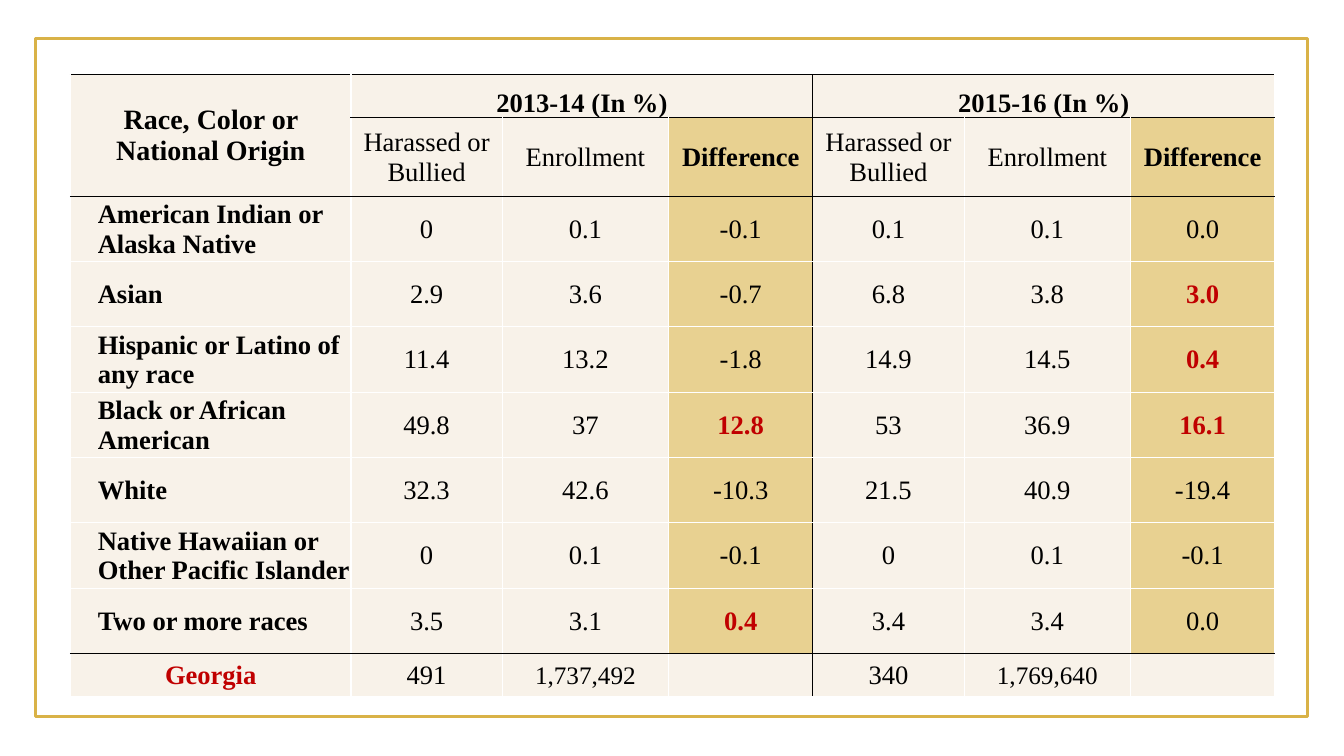
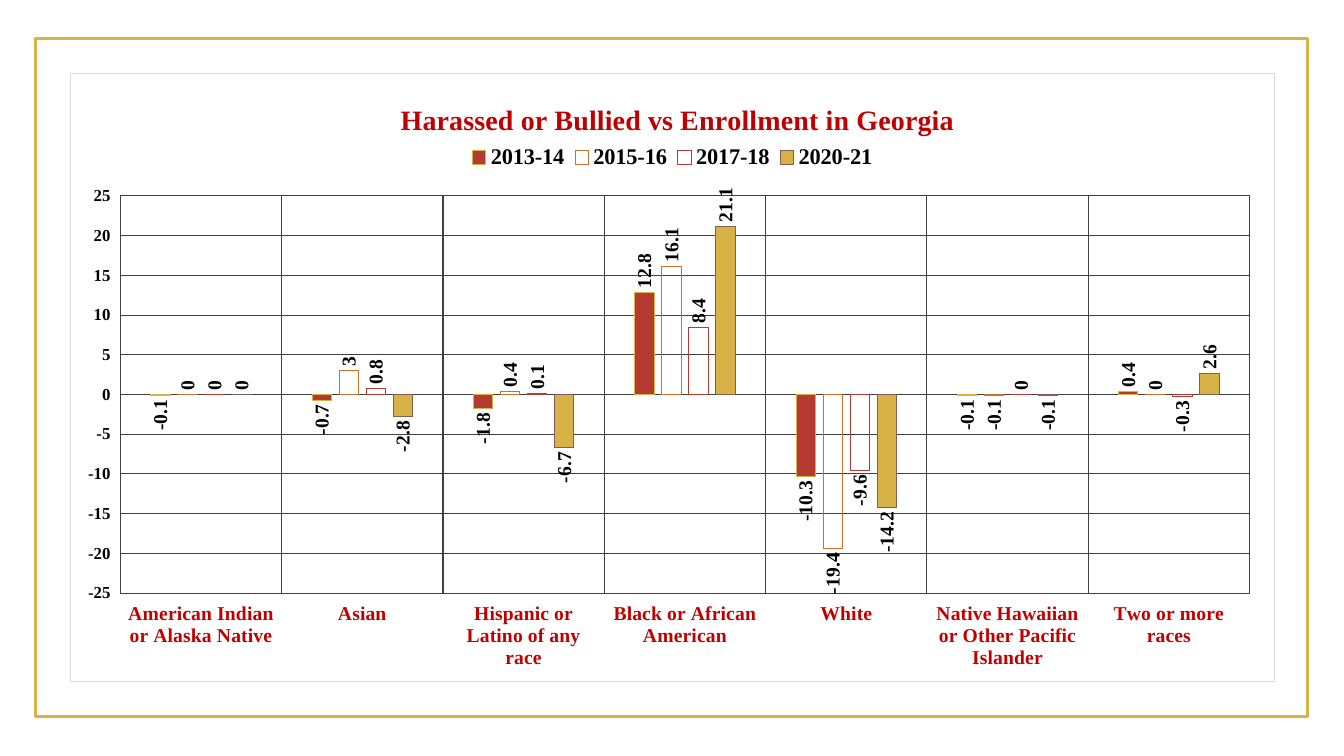
from lxml.etree import SubElement as Sub
from pptx import Presentation
from pptx.chart.data import CategoryChartData as Data
from pptx.dml.color import RGBColor as RGB
from pptx.enum.chart import XL_CHART_TYPE as Kind, XL_LABEL_POSITION as Spot
from pptx.enum.chart import XL_LEGEND_POSITION as Side, XL_TICK_LABEL_POSITION as Tags
from pptx.enum.chart import XL_TICK_MARK as Tick
from pptx.enum.shapes import MSO_SHAPE as Form
from pptx.enum.text import MSO_ANCHOR as Anchor, PP_ALIGN as Align
from pptx.oxml.ns import qn
from pptx.util import Inches, Pt

WHITE = RGB(0xFF, 0xFF, 0xFF)
BLACK = RGB(0, 0, 0)
RED = RGB(0xC0, 0, 0)
GOLD = RGB(0xD9, 0xB2, 0x47)
SAND = RGB(0xE8, 0xD1, 0x91)
CREAM = RGB(0xF8, 0xF2, 0xE9)
BRICK = RGB(0xB5, 0x3A, 0x31)
RUST = RGB(0xCC, 0x70, 0x2D)
BROWN = RGB(0x81, 0x5F, 0x56)
GREY = RGB(0x40, 0x40, 0x40)
PALE = RGB(0xD9, 0xD9, 0xD9)
FACE = "Times New Roman"

RACES = ["American Indian or Alaska Native", "Asian", "Hispanic or Latino of any race",
         "Black or African American", "White",
         "Native Hawaiian or Other Pacific Islander", "Two or more races"]
RATES = ["0 0.1 -0.1 0.1 0.1 0.0", "2.9 3.6 -0.7 6.8 3.8 3.0",
         "11.4 13.2 -1.8 14.9 14.5 0.4", "49.8 37 12.8 53 36.9 16.1",
         "32.3 42.6 -10.3 21.5 40.9 -19.4", "0 0.1 -0.1 0 0.1 -0.1",
         "3.5 3.1 0.4 3.4 3.4 0.0"]
HEADS = ["Harassed or Bullied", "Enrollment", "Difference"]
ROWS = [["Race, Color or National Origin", "2013-14 (In %)", "", "", "2015-16 (In %)", "", ""],
        [""] + HEADS * 2,
        *[[race] + rate.split() for race, rate in zip(RACES, RATES)],
        ["Georgia", "491", "1,737,492", "", "340", "1,769,640", ""]]
WIDE = [2.78] + [1.5, 1.65, 1.43] * 2
TALL = [0.43, 0.78] + [0.65] * 7 + [0.43]
SPANS = [(0, 0, 1, 0), (0, 1, 0, 3), (0, 4, 0, 6)]
LAST = len(ROWS) - 1
GAPS = (3, 6)

YEARS = [("2013-14", [-0.1, -0.7, -1.8, 12.8, -10.3, -0.1, 0.4], BRICK, GOLD),
         ("2015-16", [0, 3, 0.4, 16.1, -19.4, -0.1, 0], None, RUST),
         ("2017-18", [0, 0.8, 0.1, 8.4, -9.6, 0, -0.3], None, BRICK),
         ("2020-21", [0, -2.8, -6.7, 21.1, -14.2, -0.1, 2.6], GOLD, BROWN)]


class Deck:
    """Holds the shared style and the current slide; places are percents of the slide."""

    def __init__(self):
        self.file = Presentation()
        self.file.slide_width, self.file.slide_height = Inches(13.33), Inches(7.5)

    def box(self, x, y, w, h):
        wide, high = self.file.slide_width, self.file.slide_height
        return [int(part * full / 100) for part, full in zip((x, y, w, h), (wide, high) * 2)]

    def slide(self):
        self.now = self.file.slides.add_slide(self.file.slide_layouts[6])
        frame = self.now.shapes.add_shape(Form.RECTANGLE, *self.box(2.63, 5.05, 94.67, 89.73))
        frame.shadow.inherit = False
        frame.fill.background()
        self.line(frame.line, GOLD, 2)

    def line(self, line, tint, width=0.75):
        line.color.rgb = tint
        line.width = Pt(width)

    def font(self, font, size, tint=BLACK, bold=True):
        font.name, font.size, font.bold = FACE, Pt(size), bold
        font.color.rgb = tint

    def text(self, para, words, size, tint=BLACK, bold=True):
        run = para.add_run()
        run.text = words
        self.font(run.font, size, tint, bold)

    def edge(self, cell, tag, tint):
        props = cell._tc.get_or_add_tcPr()
        line = Sub(props, qn("a:" + tag), w=str(Pt(1)))
        Sub(Sub(line, qn("a:solidFill")), qn("a:srgbClr"), val=str(tint))

    def cell(self, cell, row, col, words):
        end = col + max(cell.span_width, 1) - 1
        dark = {"lnL": col == 4, "lnR": end == 3,
                "lnT": row in (0, 1, 2, LAST), "lnB": row in (0, 1, LAST - 1)}
        for tag, black in dark.items():
            self.edge(cell, tag, BLACK if black else WHITE)
        cell.fill.solid()
        cell.fill.fore_color.rgb = SAND if col in GAPS and 0 < row < LAST else CREAM
        cell.margin_left = cell.margin_right = cell.margin_top = Inches(0.01)
        cell.margin_bottom = 0
        cell.vertical_anchor = Anchor.BOTTOM if row == 0 and col else Anchor.MIDDLE
        if not words:
            return
        para = cell.text_frame.paragraphs[0]
        name = col == 0 and 1 < row < LAST
        para.alignment = Align.LEFT if name else Align.CENTER
        if name:
            para._p.get_or_add_pPr().set("marL", str(Inches(0.26)))
        more = col in GAPS and 1 < row < LAST and float(words) > 0
        red = more or (row == LAST and col == 0)
        bold = red or col == 0 or row == 0 or (row == 1 and col in GAPS)
        size = 20 if row == col == 0 else 18 if row == LAST and col in (2, 5) else 19
        self.text(para, words, size, RED if red else BLACK, bold)

    def table(self, *place):
        x, y, w, h = self.box(*place)
        grid = self.now.shapes.add_table(len(ROWS), len(WIDE), x, y, w, h).table
        grid.first_row = grid.horz_banding = False
        for col, share in zip(grid.columns, WIDE):
            col.width = int(w * share / sum(WIDE))
        for row, share in zip(grid.rows, TALL):
            row.height = int(h * share / sum(TALL))
        for top, left, low, right in SPANS:
            grid.cell(top, left).merge(grid.cell(low, right))
        for row, texts in enumerate(ROWS):
            for col, words in enumerate(texts):
                cell = grid.cell(row, col)
                if not cell.is_spanned:
                    self.cell(cell, row, col, words)

    def pin(self, part, index, inner=False, **place):
        for old in part.findall(qn("c:layout")):
            part.remove(old)
        plan = part.makeelement(qn("c:layout"))
        part.insert(index, plan)
        spot = Sub(plan, qn("c:manualLayout"))
        if inner:
            Sub(spot, qn("c:layoutTarget"), val="inner")
        for key in "xy":
            Sub(spot, qn(f"c:{key}Mode"), val="edge")
        for key, value in place.items():
            Sub(spot, qn("c:" + key), val=str(value / 100))

    def panel(self, chart):
        space = chart._chartSpace
        props = space.makeelement(qn("c:spPr"))
        space.find(qn("c:chart")).addnext(props)
        line = props.makeelement(qn("a:ln"), w=str(Pt(0.75)))
        for part, tint in ((props, WHITE), (line, PALE)):
            Sub(Sub(part, qn("a:solidFill")), qn("a:srgbClr"), val=str(tint))
        props.append(line)

    def axis(self, axis, size, tint):
        self.font(axis.tick_labels.font, size, tint)
        axis.tick_label_position = Tags.LOW
        axis.major_tick_mark = axis.minor_tick_mark = Tick.NONE
        axis.format.line.fill.background()
        axis.has_major_gridlines = True
        self.line(axis.major_gridlines.format.line, GREY)

    def bars(self, bars, fill, edge):
        bars.invert_if_negative = False
        if fill is None:
            bars.format.fill.background()
        else:
            bars.format.fill.solid()
            bars.format.fill.fore_color.rgb = fill
        self.line(bars.format.line, edge)
        tags = bars.data_labels
        tags.show_value = True
        tags.position = Spot.OUTSIDE_END
        self.font(tags.font, 14)
        body = tags._element.find(qn("c:txPr")).find(qn("a:bodyPr"))
        body.set("rot", "-5400000")
        body.set("vert", "horz")

    def chart(self, title, *place):
        data = Data()
        data.categories = RACES
        for name, values, *_ in YEARS:
            data.add_series(name, values)
        chart = self.now.shapes.add_chart(Kind.COLUMN_CLUSTERED, *self.box(*place), data).chart
        self.font(chart.font, 10, bold=False)
        self.panel(chart)
        chart.has_title = True
        head = chart.chart_title
        self.text(head.text_frame.paragraphs[0], title, 20, RED)
        self.pin(head._element, 1, x=27, y=3.8)
        chart.has_legend = True
        key = chart.legend
        key.position = Side.TOP
        key.include_in_layout = False
        self.font(key.font, 16)
        self.pin(key._element, 1, x=32.5, y=11.3, w=35, h=5)
        plot = chart.plots[0]
        plot.gap_width, plot.overlap, plot.vary_by_categories = 315, -40, False
        self.pin(chart._chartSpace.chart.plotArea, 0, True, x=4.15, y=20.1, w=93.8, h=65.4)
        self.axis(chart.category_axis, 14, RED)
        scale = chart.value_axis
        self.axis(scale, 12, BLACK)
        scale.minimum_scale, scale.maximum_scale, scale.major_unit = -25, 25, 5
        for bars, (_, _, fill, edge) in zip(plot.series, YEARS):
            self.bars(bars, fill, edge)


def main():
    deck = Deck()
    deck.slide()
    deck.table(5.25, 9.87, 89.6, 82.3)
    deck.slide()
    deck.chart("Harassed or Bullied vs Enrollment in Georgia", 5.2, 9.7, 89.65, 80.5)
    deck.file.save("out.pptx")


if __name__ == "__main__":
    main()
